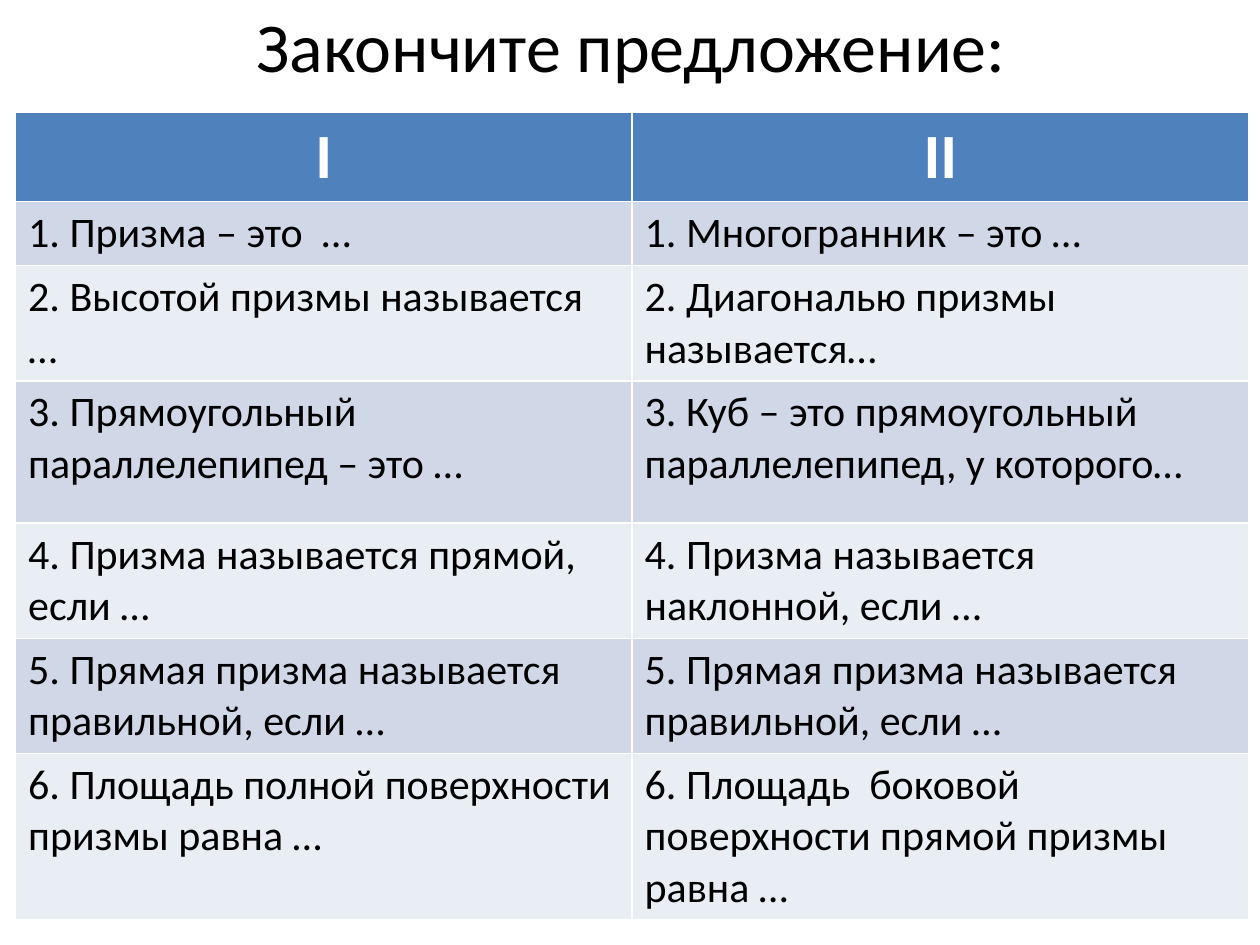
from pptx import Presentation
from pptx.dml.color import RGBColor
from pptx.enum.text import MSO_ANCHOR, PP_ALIGN
from pptx.util import Pt

CENTER, LEFT = PP_ALIGN.CENTER, PP_ALIGN.LEFT
MIDDLE = MSO_ANCHOR.MIDDLE

HEADER = ("I", "II")
SENTENCES = [
    ("1. Призма – это  …", "1. Многогранник – это …"),
    ("2. Высотой призмы называется …", "2. Диагональю призмы называется…"),
    ("3. Прямоугольный параллелепипед – это …",
     "3. Куб – это прямоугольный параллелепипед, у которого…"),
    ("4. Призма называется прямой, если …",
     "4. Призма называется наклонной, если …"),
    ("5. Прямая призма называется правильной, если …",
     "5. Прямая призма называется правильной, если …"),
    ("6. Площадь полной поверхности призмы равна …",
     "6. Площадь  боковой поверхности прямой призмы равна …"),
]
ROW_HEIGHTS = (49, 35.3, 62.6, 81.4, 62.6, 62.6, 87.8)


def color(value):
    return RGBColor.from_string(value)


class Deck:
    font = "Calibri"
    dark, light = "000000", "FFFFFF"
    header_fill = "4F81BD"
    bands = ("D0D8E8", "E9EDF4")

    def __init__(self, prs):
        self.s = prs.slides.add_slide(prs.slide_layouts[5])

    def add_text(self, tf, text, size, fill, align=LEFT, bold=False):
        p = tf.paragraphs[0]
        p.alignment = align
        r = p.add_run()
        r.text = text
        r.font.name, r.font.size, r.font.bold = self.font, Pt(size), bold
        r.font.color.rgb = color(fill)

    def title(self, text, x, y, w, h):
        sp = self.s.shapes.title
        sp.left, sp.top, sp.width, sp.height = Pt(x), Pt(y), Pt(w), Pt(h)
        sp.text_frame.vertical_anchor = MIDDLE
        self.add_text(sp.text_frame, text, 40, self.dark, CENTER)

    def table(self, header, rows, x, y, w, heights):
        """Header row over banded rows; the table style draws the white rules."""
        frame = self.s.shapes.add_table(len(heights), len(header), Pt(x), Pt(y),
                                        Pt(w), Pt(sum(heights)))
        tbl = frame.table
        for i, texts in enumerate([header, *rows]):
            tbl.rows[i].height = Pt(heights[i])
            for j, text in enumerate(texts):
                cell = tbl.cell(i, j)
                cell.fill.solid()
                if i == 0:
                    cell.fill.fore_color.rgb = color(self.header_fill)
                    self.add_text(cell.text_frame, text, 36, self.light, CENTER, True)
                else:
                    cell.fill.fore_color.rgb = color(self.bands[(i - 1) % 2])
                    self.add_text(cell.text_frame, text, 24, self.dark)


def main():
    prs = Presentation()
    prs.slide_width, prs.slide_height = Pt(720), Pt(540)
    deck = Deck(prs)
    deck.title("Закончите предложение:", 36.7, -19.4, 648, 90)
    deck.table(HEADER, SENTENCES, 8.9, 64, 704.6, ROW_HEIGHTS)
    prs.save("out.pptx")


if __name__ == "__main__":
    main()
